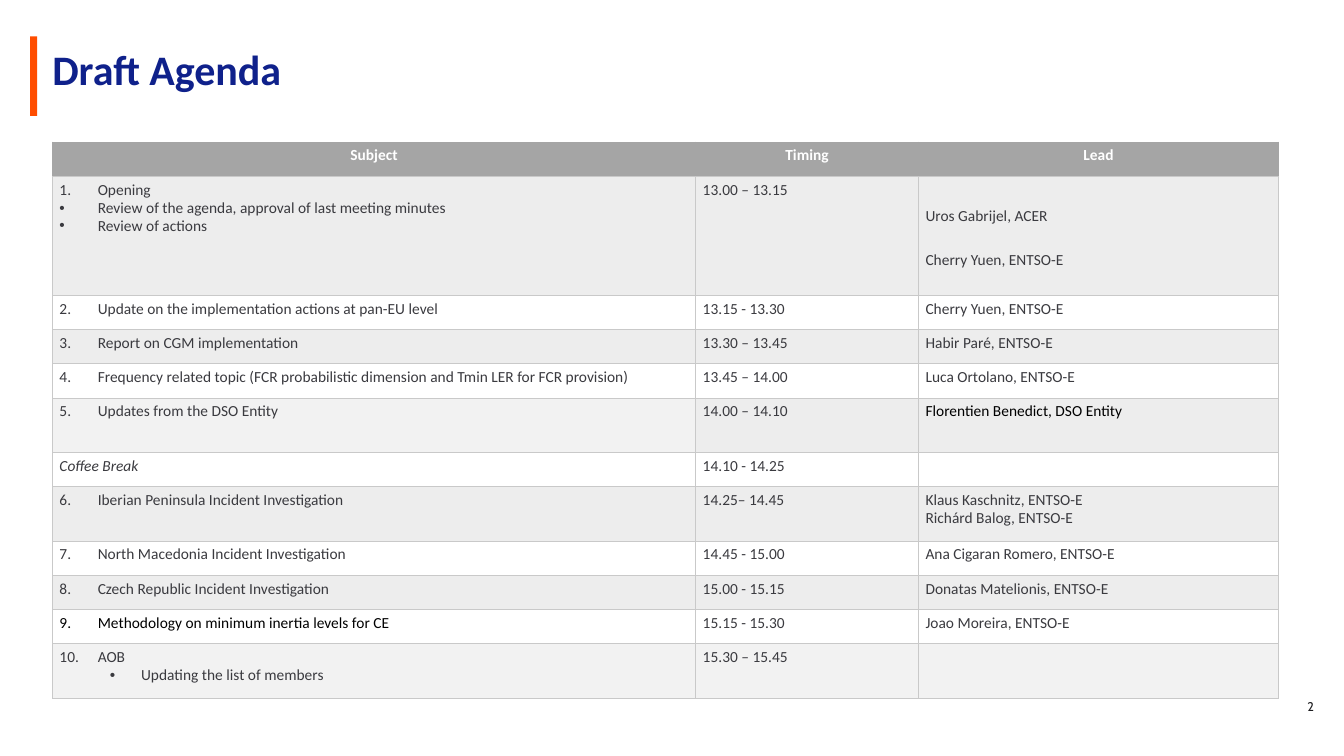
from dataclasses import dataclass

import pptx
import pptx.dml.color
import pptx.enum.shapes
import pptx.enum.text
import pptx.oxml.ns
import pptx.slide
import pptx.table
import pptx.text.text
import pptx.util
from lxml import etree

Inches = pptx.util.Inches
Pt = pptx.util.Pt
ALIGN = pptx.enum.text.PP_ALIGN

HUES = {
    "navy": "0F218B", "flame": "FF4D00", "ink": "1D1D20", "text": "3A3A3F",
    "black": "000000", "white": "FFFFFF", "head": "A5A5A5",
    "edge": "C9C9C9", "grey": "EDEDED", "pale": "F2F2F2",
}


@dataclass
class Line:
    """One paragraph; num is its list number, level is its bullet depth."""
    text: str
    num: int = 0
    level: int = 0
    hue: str = "text"
    bold: bool = False
    slant: bool = False
    after: float = 0
    align: ALIGN = ALIGN.LEFT


@dataclass
class Row:
    topic: list[Line]
    time: str
    lead: list[Line]
    fills: tuple[str, str, str]
    high: float = 0.34
    after: float = 0
    top: float = 0.05


GREY, PLAIN, PALE = (("grey",) * 3, ("white",) * 3, ("pale",) * 3)
WIDTHS = (6.38, 2.21, 3.57)
HEADS = ("Subject", "Timing", "Lead")
ROWS = [
    Row([Line("Opening", num=1),
         Line("Review of the agenda, approval of last meeting minutes", level=1),
         Line("Review of actions", level=1)],
        "13.00 – 13.15",
        [Line("Uros Gabrijel, ACER", after=18.8),
         Line("Cherry Yuen, ENTSO-E", after=6)], GREY, 1.18, 6, 0.31),
    Row([Line("Update on the implementation actions at pan-EU level", num=2)],
        "13.15 - 13.30", [Line("Cherry Yuen, ENTSO-E", after=6)], PLAIN, after=6),
    Row([Line("Report on CGM implementation", num=3)],
        "13.30 – 13.45", [Line("Habir Paré, ENTSO-E", after=6)], GREY, after=6),
    Row([Line("Frequency related topic (FCR probabilistic dimension and "
              "Tmin LER for FCR provision)", num=4)],
        "13.45 – 14.00", [Line("Luca Ortolano, ENTSO-E", after=6)], PLAIN, after=6),
    Row([Line("Updates from the DSO Entity", num=5)], "14.00 – 14.10",
        [Line("Florentien Benedict, DSO Entity", hue="black", after=6)],
        ("pale", "grey", "grey"), 0.54, 6),
    Row([Line("Coffee Break", slant=True)], "14.10 - 14.25", [], PLAIN, after=6),
    Row([Line("Iberian Peninsula Incident Investigation", num=6)], "14.25– 14.45",
        [Line("Klaus Kaschnitz, ENTSO-E"), Line("Richárd Balog, ENTSO-E")],
        GREY, 0.54),
    Row([Line("North Macedonia Incident Investigation", num=7)],
        "14.45 - 15.00", [Line("Ana Cigaran Romero, ENTSO-E")], PLAIN),
    Row([Line("Czech Republic Incident Investigation", num=8)],
        "15.00 - 15.15", [Line("Donatas Matelionis, ENTSO-E")], GREY),
    Row([Line("Methodology on minimum inertia levels for CE", num=9, hue="black")],
        "15.15 - 15.30", [Line("Joao Moreira, ENTSO-E")], PLAIN),
    Row([Line("AOB", num=10), Line("Updating the list of members", level=2)],
        "15.30 – 15.45", [], PALE, 0.54, 6),
]


def tint(name: str) -> pptx.dml.color.RGBColor:
    return pptx.dml.color.RGBColor.from_string(HUES[name])


def add(node, tag: str, **attrs: str):
    return etree.SubElement(node, pptx.oxml.ns.qn(tag), attrs)


def mark(para, line: Line) -> None:
    """Give a paragraph its number or bullet and hanging indent."""
    if not (line.num or line.level):
        return
    left, hang = (0.81, 0.31) if line.level == 2 else (0.38, 0.38)
    props = para._p.get_or_add_pPr()
    props.set("marL", str(Inches(left)))
    props.set("indent", str(-Inches(hang)))
    if line.num:
        add(props, "a:buFont", typeface="+mj-lt")
        add(props, "a:buAutoNum", type="arabicPeriod", startAt=str(line.num))
    else:
        add(props, "a:buFont", typeface="Arial")
        add(props, "a:buChar", char="•")


def write(frame: pptx.text.text.TextFrame, lines: list[Line], size: float = 11,
          pitch: float = 12.8, face: str = "Calibri") -> None:
    for i, line in enumerate(lines):
        para = frame.add_paragraph() if i else frame.paragraphs[0]
        para.alignment = line.align
        para.line_spacing = Pt(pitch)
        para.space_after = Pt(line.after)
        mark(para, line)
        if not line.text:
            para.font.size = Pt(size)
            continue
        run = para.add_run()
        run.text = line.text
        font = run.font
        font.name, font.size = face, Pt(size)
        font.bold, font.italic = line.bold, line.slant
        font.color.rgb = tint(line.hue)


def label(slide: pptx.slide.Slide, box: tuple[float, ...], line: Line,
          size: float, pitch: float, face: str) -> None:
    frame = slide.shapes.add_textbox(*map(Inches, box)).text_frame
    frame.word_wrap = True
    frame.vertical_anchor = pptx.enum.text.MSO_ANCHOR.MIDDLE
    write(frame, [line], size, pitch, face)


def fill(cell: pptx.table._Cell, lines: list[Line], back: str,
         edge: str = "edge", top: float = 0.05) -> None:
    """Set the borders, fill, margins and text of a cell."""
    props = cell._tc.get_or_add_tcPr()
    for side in "LRTB":
        rule = add(props, f"a:ln{side}", w=str(Pt(0.75)))
        hue = "edge" if side == "B" else edge
        add(add(rule, "a:solidFill"), "a:srgbClr", val=HUES[hue])
    cell.fill.solid()
    cell.fill.fore_color.rgb = tint(back)
    cell.margin_left = cell.margin_right = Inches(0.07)
    cell.margin_top, cell.margin_bottom = Inches(top), Inches(0.05)
    write(cell.text_frame, lines or [Line("")])


def agenda(slide: pptx.slide.Slide) -> None:
    highs = [0.34] + [row.high for row in ROWS]
    grid = slide.shapes.add_table(
        len(highs), len(WIDTHS), Inches(0.52), Inches(1.41),
        Inches(sum(WIDTHS)), Inches(sum(highs))).table
    grid.first_row = grid.horz_banding = False
    for col, wide in zip(grid.columns, WIDTHS):
        col.width = Inches(wide)
    for band, high in zip(grid.rows, highs):
        band.height = Inches(high)
    for c, head in enumerate(HEADS):
        line = Line(head, hue="white", bold=True, align=ALIGN.CENTER)
        fill(grid.cell(0, c), [line], "head", "head")
    for r, row in enumerate(ROWS, 1):
        time = [Line(row.time, after=row.after)]
        for c, lines in enumerate((row.topic, time, row.lead)):
            fill(grid.cell(r, c), lines, row.fills[c],
                 top=row.top if c == 2 else 0.05)


def main() -> None:
    deck = pptx.Presentation()
    deck.slide_width, deck.slide_height = Inches(13.33), Inches(7.5)
    slide = deck.slides.add_slide(deck.slide_layouts[6])
    label(slide, (6.75, 6.82, 6.38, 0.4),
          Line("2", hue="ink", align=ALIGN.RIGHT), 9, 9, "Cabin")
    bar = slide.shapes.add_shape(
        pptx.enum.shapes.MSO_SHAPE.RECTANGLE,
        Inches(0.3), Inches(0.36), Inches(0.07), Inches(0.79))
    bar.shadow.inherit = False
    bar.fill.solid()
    bar.fill.fore_color.rgb = tint("flame")
    bar.line.fill.background()
    label(slide, (0.42, 0.51, 12.71, 0.39),
          Line("Draft Agenda", hue="navy", bold=True), 30, 32, "Calibri")
    agenda(slide)
    deck.save("out.pptx")


if __name__ == "__main__":
    main()
